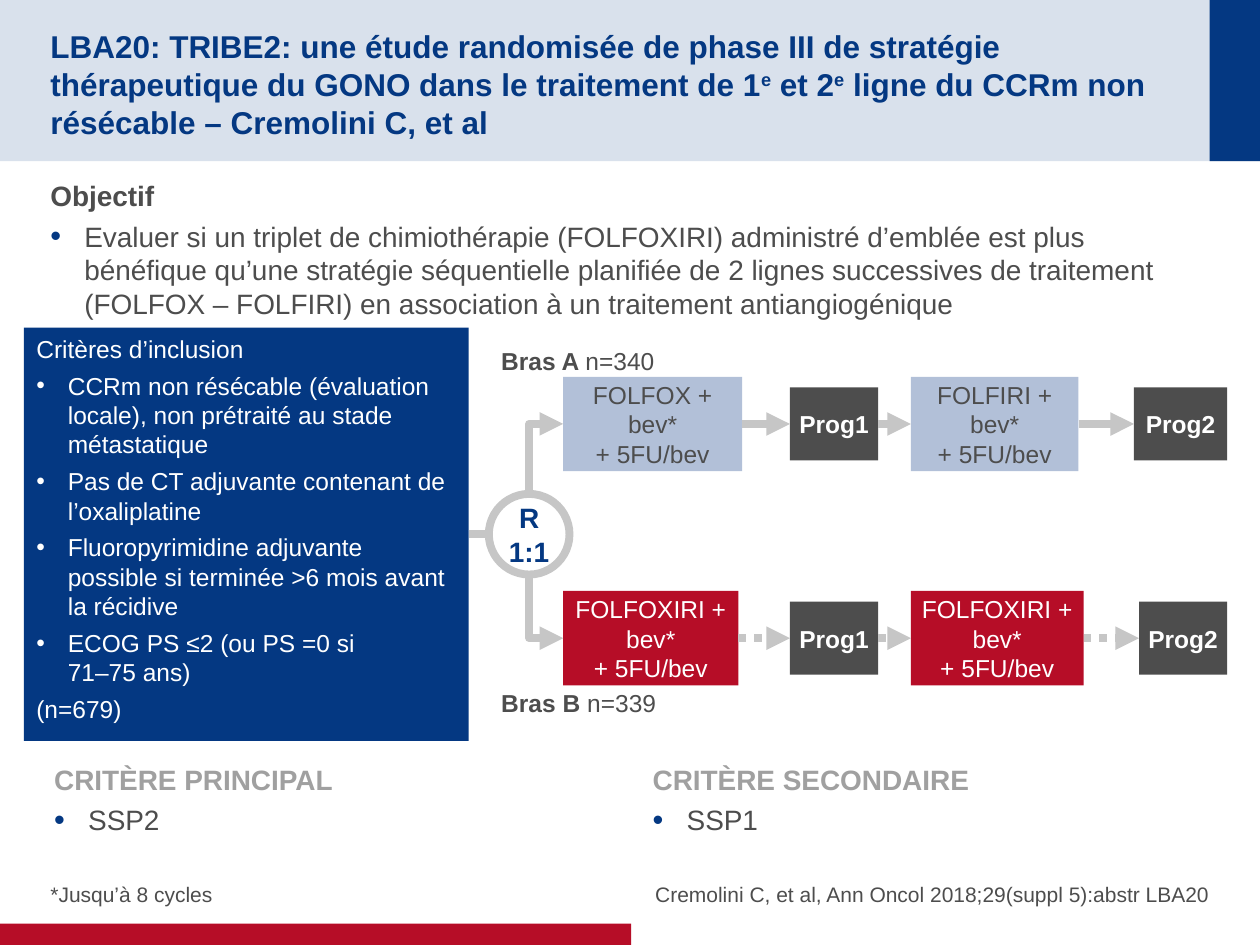
from collections import namedtuple
from dataclasses import dataclass
from lxml.etree import SubElement
from pptx import Presentation
from pptx.dml.color import RGBColor
from pptx.enum.dml import MSO_LINE
from pptx.enum.shapes import MSO_CONNECTOR, MSO_SHAPE
from pptx.enum.text import MSO_ANCHOR, PP_ALIGN
from pptx.oxml.ns import qn
from pptx.util import Inches, Pt


@dataclass(frozen=True)
class Theme:
    font: str = "Arial"
    navy: str = "043882"
    red: str = "B60D27"
    pale: str = "B2C0D8"
    dark: str = "4D4D4D"
    gray: str = "A0A0A0"
    wire: str = "C6C6C6"
    white: str = "FFFFFF"
    title: int = 18
    body: int = 16
    small: int = 14
    note: int = 12
    stroke: float = 4.5


T = Theme()
Box = namedtuple("Box", "x y w h")
Step = namedtuple("Step", "text x w")
COLS, ROWS = 100, 75
DRUG = "{} + bev*\n+ 5FU/bev"


def cell(n):
    return Inches(n / 10)


def place(box):
    return [cell(n) for n in box]


def inner(box, x, y, w, h):
    return Box(box.x + x, box.y + y, w, h)


def tint(hue):
    return RGBColor.from_string(hue)


def pad(frame, sides, anchor=MSO_ANCHOR.TOP, wrap=True):
    frame.margin_left, frame.margin_top, frame.margin_right, frame.margin_bottom = place(sides)
    frame.vertical_anchor = anchor
    frame.word_wrap = wrap


def write(frame, runs, size, hue, align=PP_ALIGN.LEFT, gap=0, dot=None, dent=0):
    para = frame.paragraphs[0]
    if para.runs:
        para = frame.add_paragraph()
    para.alignment = align
    para.space_after = Pt(gap)
    for text, bold, *lift in runs:
        for i, part in enumerate(text.split("\n")):
            if i:
                para.add_line_break()
            run = para.add_run()
            run.text = part
            run.font.name, run.font.size, run.font.bold = T.font, Pt(size), bold
            run.font.color.rgb = tint(hue)
            if lift:
                run.font._element.set("baseline", "30000")
    if dot:
        props = para._p.get_or_add_pPr()
        props.set("marL", str(cell(dent)))
        props.set("indent", str(-cell(dent)))
        SubElement(SubElement(props, qn("a:buClr")), qn("a:srgbClr")).set("val", dot)
        if dot == T.navy:
            SubElement(props, qn("a:buSzPct")).set("val", "110000")
        SubElement(props, qn("a:buFont")).set("typeface", T.font)
        SubElement(props, qn("a:buChar")).set("char", "•")


def block(slide, box, fill, kind=MSO_SHAPE.RECTANGLE):
    shape = slide.shapes.add_shape(kind, *place(box))
    shape.shadow.inherit = False
    shape.fill.solid()
    shape.fill.fore_color.rgb = tint(fill)
    shape.line.fill.background()
    return shape


def words(slide, box, sides=(0, 0.5, 0, 0.5), anchor=MSO_ANCHOR.TOP, wrap=True):
    frame = slide.shapes.add_textbox(*place(box)).text_frame
    pad(frame, sides, anchor, wrap)
    return frame


def wire(slide, start, end, first=None, last=None, dash=False, head=True):
    line = slide.shapes.add_connector(MSO_CONNECTOR.STRAIGHT, *place(start + end))
    if first is not None:
        line.begin_connect(first, 3)
    if last is not None:
        line.end_connect(last, 1)
    line.line.color.rgb = tint(T.wire)
    line.line.width = Pt(T.stroke)
    if dash:
        line.line.dash_style = MSO_LINE.ROUND_DOT
        line.line._ln.find(qn("a:prstDash")).set("val", "sysDot")
    if head:
        SubElement(line.line._ln, qn("a:tailEnd")).set("type", "triangle")
    SubElement(line._element.spPr, qn("a:effectLst"))
    return line


def bend(slide, start, end, goal):
    line = wire(slide, start, end, last=goal)
    wide, tall = end[0] - start[0], abs(end[1] - start[1])
    midx, midy = (start[0] + end[0]) / 2, (start[1] + end[1]) / 2
    spot = Box(midx - tall / 2, midy - wide / 2, tall, wide)
    line.left, line.top, line.width, line.height = place(spot)
    props = line._element.spPr
    props.find(qn("a:prstGeom")).set("prst", "bentConnector2")
    frame = props.find(qn("a:xfrm"))
    rise = end[1] < start[1]
    frame.set("rot", str((90 if rise else 270) * 60000))
    frame.set("flipH", "1")
    frame.set("flipV", "1" if rise else "0")


def header(slide, box):
    band = block(slide, box, T.navy)
    hue = band.fill._xPr.find(qn("a:solidFill")).find(qn("a:srgbClr"))
    SubElement(hue, qn("a:alpha")).set("val", "15000")
    block(slide, inner(box, box.w - 4, 0, 4, box.h), T.navy)
    frame = words(slide, inner(box, 4, 2, 90.1, 8.8), (0, 0.5, 0, 0), MSO_ANCHOR.MIDDLE)
    write(frame, [
        ("LBA20: TRIBE2: une étude randomisée de phase III de stratégie thérapeutique "
         "du GONO dans le traitement de 1", True),
        ("e", True, "up"), (" et 2", True), ("e", True, "up"),
        (" ligne du CCRm non résécable – Cremolini C, et al", True)], T.title, T.navy)


def topic(slide, box, head, text, hue):
    frame = words(slide, box)
    write(frame, [(head, True)], T.body, hue, gap=4)
    write(frame, [(text, False)], T.body, T.dark, gap=4, dot=T.navy, dent=2.7)


def panel(slide, box):
    shape = block(slide, box, T.navy, MSO_SHAPE.ROUNDED_RECTANGLE)
    shape.adjustments[0] = 0
    frame = shape.text_frame
    pad(frame, (1, 0.5, 1, 0.5))
    rules = ["CCRm non résécable (évaluation locale), non prétraité au stade métastatique",
             "Pas de CT adjuvante contenant de l’oxaliplatine",
             "Fluoropyrimidine adjuvante possible si terminée >6 mois avant la récidive",
             "ECOG PS ≤2 (ou PS =0 si\n71–75 ans)"]
    write(frame, [("Critères d’inclusion", False)], T.small, T.white, gap=4.2)
    for rule in rules:
        write(frame, [(rule, False)], T.small, T.white, gap=4.2, dot=T.white, dent=2.5)
    write(frame, [("(n=679)", False)], T.small, T.white, gap=4.2)
    return shape


def arm(slide, box, name, count, drop, steps, fill, ink, side, dash):
    mid = box.y + box.h / 2
    chain = []
    for i, step in enumerate(steps):
        prog = i % 2 == 1
        tall = 5.8 if prog else box.h
        spot = inner(box, step.x, (box.h - tall) / 2, step.w, tall)
        shape = block(slide, spot, T.dark if prog else fill)
        edge = 0.4 if prog else side
        pad(shape.text_frame, (edge, 0, edge, 0), MSO_ANCHOR.MIDDLE)
        write(shape.text_frame, [(step.text, prog)], T.small,
              T.white if prog else ink, PP_ALIGN.CENTER)
        chain.append((shape, spot))
    for (last, a), (goal, b) in zip(chain, chain[1:]):
        wire(slide, (a.x + a.w, mid), (b.x, mid), last, goal, dash)
    frame = words(slide, inner(box, -5.9, drop, 14.4, 3.4), (1, 0.5, 1, 0.5), wrap=False)
    write(frame, [(name + " ", True), (count, False)], T.small, T.dark)
    return chain[0][0]


def design(slide, box):
    group = panel(slide, inner(box, 0, 0, 35.3, 32.8))
    ring = inner(box, 36.9, 13.2, 6.4, 6.4)
    top = inner(box, 42.8, 3.9, 52.7, 7.5)
    low = inner(box, 42.8, 20.9, 52.7, 7.5)
    upper = arm(slide, top, "Bras A", "n=340", -2.9, [
        Step(DRUG.format("FOLFOX"), 0, 14.2), Step("Prog1", 18, 7),
        Step(DRUG.format("FOLFIRI"), 27.6, 13.3), Step("Prog2", 45.3, 7.4)],
        T.pale, T.dark, 1, False)
    lower = arm(slide, low, "Bras B", "n=339", 7.2, [
        Step(DRUG.format("FOLFOXIRI"), 0, 13.9), Step("Prog1", 18, 7),
        Step(DRUG.format("FOLFOXIRI"), 27.6, 13.7), Step("Prog2", 45.7, 7)],
        T.red, T.white, 0.4, True)
    midx, midy = ring.x + ring.w / 2, ring.y + ring.h / 2
    wire(slide, (box.x + 35.3, midy), (ring.x, midy), group, head=False)
    bend(slide, (midx, ring.y), (top.x, top.y + top.h / 2), upper)
    bend(slide, (midx, ring.y + ring.h), (low.x, low.y + low.h / 2), lower)
    knot = block(slide, ring, T.white, MSO_SHAPE.OVAL)
    knot.line.color.rgb = tint(T.wire)
    knot.line.width = Pt(T.stroke)
    pad(knot.text_frame, (1, 0.5, 1, 0.5), MSO_ANCHOR.MIDDLE, False)
    write(knot.text_frame, [("R\n1:1", True)], T.body, T.navy, PP_ALIGN.CENTER)


def footer(slide, box):
    block(slide, inner(box, 0, 6.6, 50.1, 1.7), T.red)
    notes = [("*Jusqu’à 8 cycles", 4, 46.8, PP_ALIGN.LEFT),
             ("Cremolini C, et al, Ann Oncol 2018;29(suppl 5):abstr LBA20",
              50.8, 45.2, PP_ALIGN.RIGHT)]
    for text, x, wide, align in notes:
        frame = words(slide, inner(box, x, 0, wide, 5.3), (0, 0, 0, 0), MSO_ANCHOR.BOTTOM)
        write(frame, [(text, False)], T.note, T.dark, align, 4)


def main():
    deck = Presentation()
    deck.slide_width, deck.slide_height = cell(COLS), cell(ROWS)
    slide = deck.slides.add_slide(deck.slide_layouts[6])
    header(slide, Box(0, 0, COLS, 12.8))
    topic(slide, Box(4, 13.7, 92, 13.2), "Objectif",
          "Evaluer si un triplet de chimiothérapie (FOLFOXIRI) administré d’emblée est plus "
          "bénéfique qu’une stratégie séquentielle planifiée de 2 lignes successives de "
          "traitement (FOLFOX – FOLFIRI) en association à un traitement antiangiogénique", T.dark)
    design(slide, Box(1.9, 26, 95.5, 32.8))
    topic(slide, Box(4.3, 60, 45.2, 6.6), "CRITÈRE PRINCIPAL", "SSP2", T.gray)
    topic(slide, Box(51.8, 60, 43.2, 6.6), "CRITÈRE SECONDAIRE", "SSP1", T.gray)
    footer(slide, Box(0, 66.7, COLS, 8.3))
    deck.save("out.pptx")


if __name__ == "__main__":
    main()
